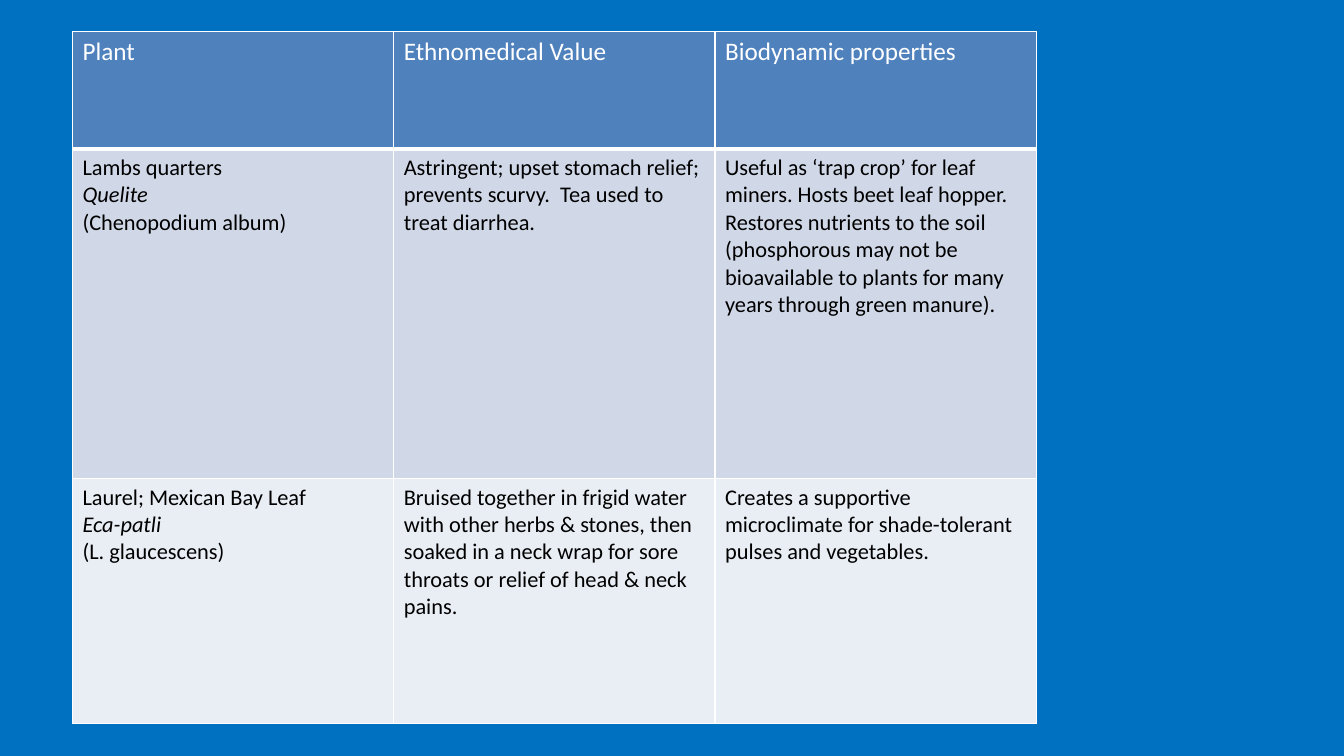
from dataclasses import dataclass

from pptx import Presentation
from pptx import util as u
from pptx.dml.color import RGBColor
from pptx.oxml import parse_xml
from pptx.oxml.ns import nsdecls
from pptx.table import _Cell

PX = 9525


@dataclass(frozen=True)
class Theme:
    font: str = "Calibri"
    background: str = "0070C0"
    border: str = "FFFFFF"
    header_size: int = 18
    body_size: int = 16
    thin: int = 1
    thick: int = 3


@dataclass(frozen=True)
class RowStyle:
    fill: str
    color: str
    size: int
    bottom: int


@dataclass(frozen=True)
class PlantRow:
    height: int
    style: RowStyle
    cells: tuple[tuple[str, ...], ...]
    italic_line: int = 1


THEME = Theme()
HEADER = RowStyle("4F81BD", "FFFFFF", THEME.header_size, THEME.thick)
DARK_BAND = RowStyle("D0D8E8", "000000", THEME.body_size, THEME.thin)
LIGHT_BAND = RowStyle("E9EDF4", "000000", THEME.body_size, THEME.thin)

LEFT, TOP, COLUMN_WIDTH = 69, 30, 306
ROWS = (
    PlantRow(112, HEADER, (
        ("Plant",),
        ("Ethnomedical Value",),
        ("Biodynamic properties",),
    )),
    PlantRow(314, DARK_BAND, (
        ("Lambs quarters", "Quelite", "(Chenopodium album)"),
        ("Astringent; upset stomach relief; prevents scurvy.  Tea used to treat diarrhea.",),
        ("Useful as ‘trap crop’ for leaf miners. Hosts beet leaf hopper. "
         " Restores nutrients to the soil (phosphorous may not be bioavailable "
         "to plants for many years through green manure).",),
    )),
    PlantRow(233, LIGHT_BAND, (
        ("Laurel; Mexican Bay Leaf", "Eca-patli", "(L. glaucescens)"),
        ("Bruised together in frigid water with other herbs & stones, then soaked "
         "in a neck wrap for sore throats or relief of head & neck pains.",),
        ("Creates a supportive microclimate for shade-tolerant pulses and vegetables.",),
    )),
)


def px(length: int) -> u.Emu:
    return u.Emu(length * PX)


def set_borders(cell: _Cell, bottom: int) -> None:
    tc_pr = cell._tc.get_or_add_tcPr()
    widths = {"lnL": THEME.thin, "lnR": THEME.thin, "lnT": THEME.thin, "lnB": bottom}
    for position, (side, width) in enumerate(widths.items()):
        line = parse_xml(
            f'<a:{side} {nsdecls("a")} w="{u.Pt(width)}"><a:solidFill>'
            f'<a:srgbClr val="{THEME.border}"/></a:solidFill></a:{side}>'
        )
        tc_pr.insert(position, line)


def fill_cell(cell: _Cell, lines: tuple[str, ...], row: PlantRow) -> None:
    style = row.style
    cell.fill.solid()
    cell.fill.fore_color.rgb = RGBColor.from_string(style.fill)
    set_borders(cell, style.bottom)
    tf = cell.text_frame
    tf.text = "\n".join(lines)
    for index, p in enumerate(tf.paragraphs):
        p.font.name = THEME.font
        p.font.size = u.Pt(style.size)
        p.font.bold = False
        p.font.italic = index == row.italic_line
        p.font.color.rgb = RGBColor.from_string(style.color)


def main() -> None:
    prs = Presentation()
    prs.slide_width, prs.slide_height = px(1280), px(720)
    s = prs.slides.add_slide(prs.slide_layouts[6])
    s.background.fill.solid()
    s.background.fill.fore_color.rgb = RGBColor.from_string(THEME.background)

    columns = len(ROWS[0].cells)
    height = sum(row.height for row in ROWS)
    table = s.shapes.add_table(
        len(ROWS), columns, px(LEFT), px(TOP), px(COLUMN_WIDTH * columns), px(height)
    ).table
    table.first_row = False
    table.horz_banding = False
    for table_row, row in zip(table.rows, ROWS):
        table_row.height = px(row.height)
        for cell, lines in zip(table_row.cells, row.cells):
            fill_cell(cell, lines, row)
    prs.save("out.pptx")


if __name__ == "__main__":
    main()
